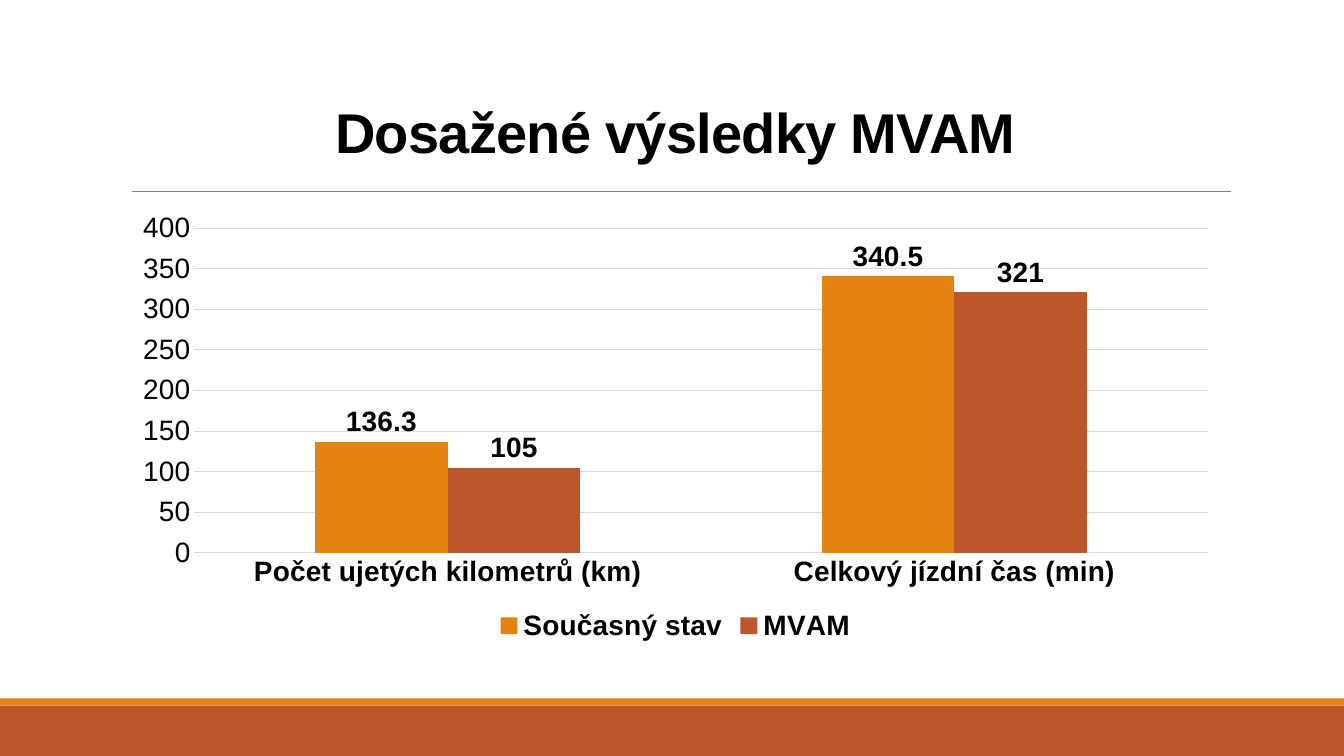
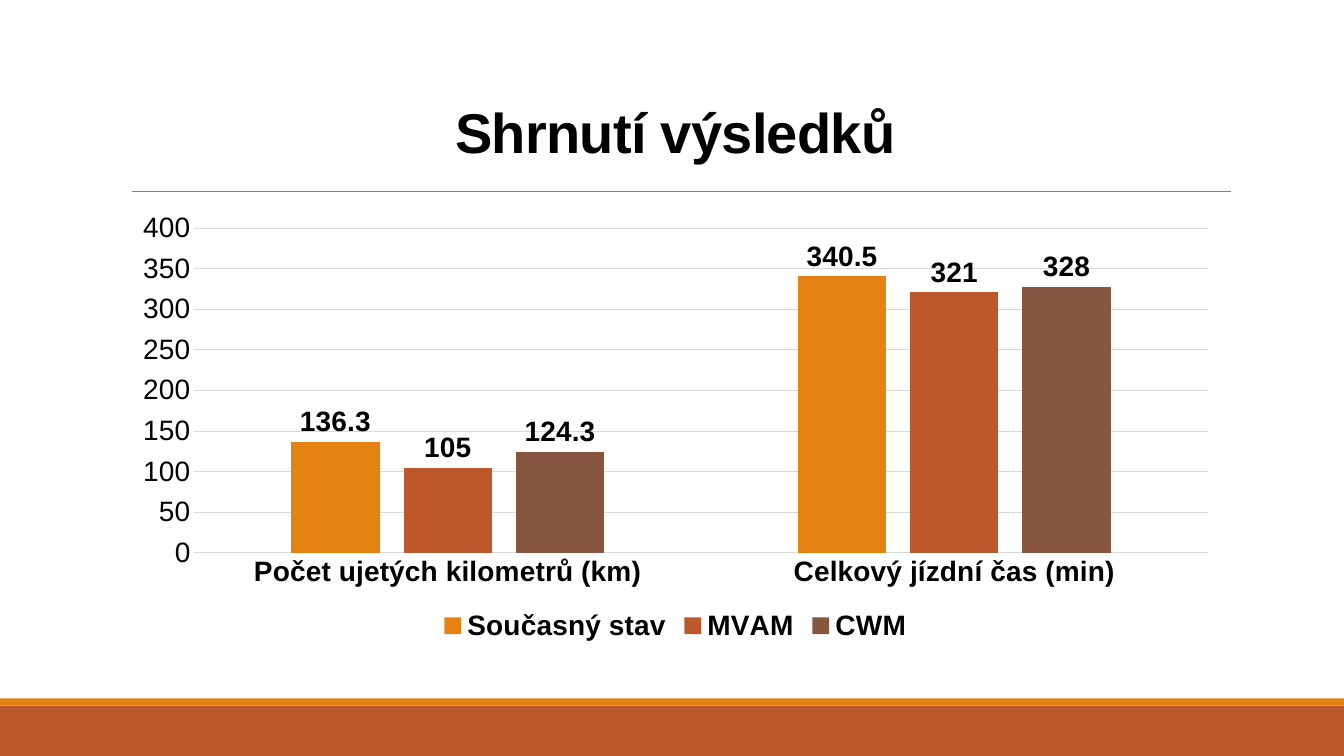
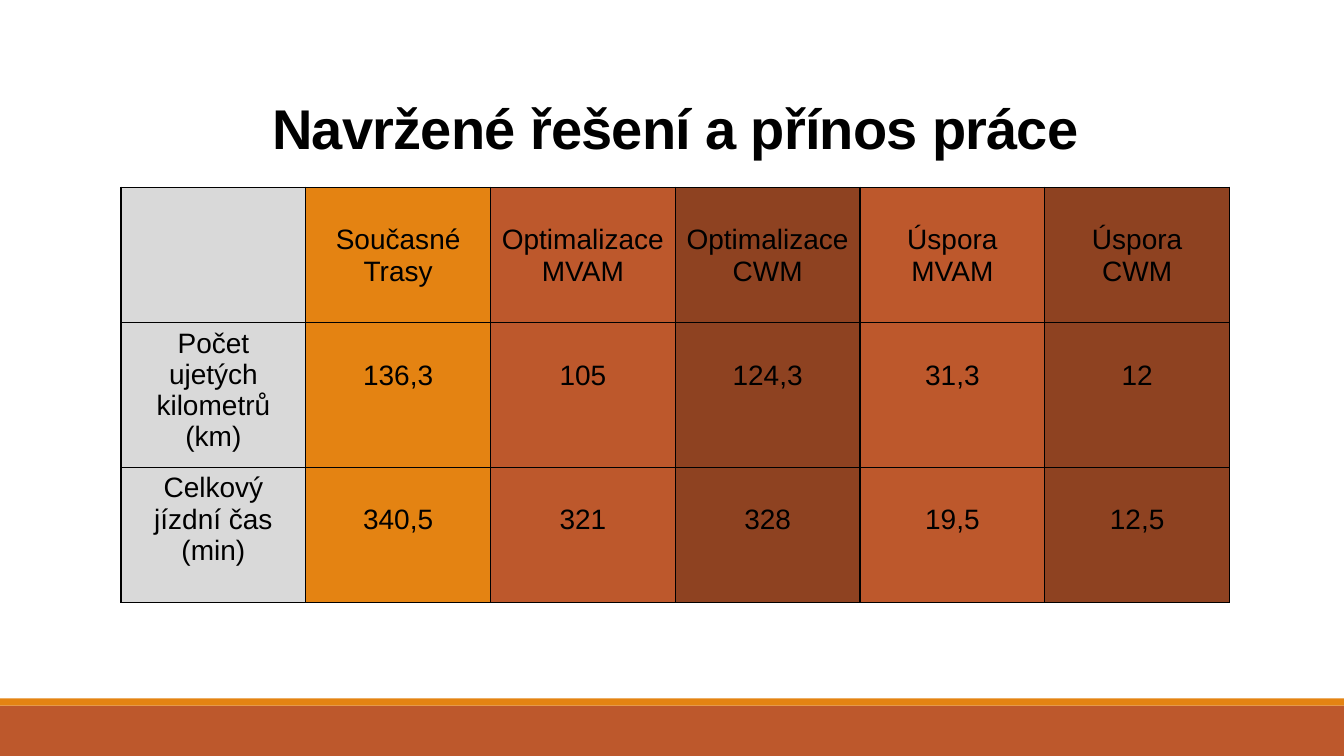
"""Builds three slides that compare route optimisation results."""
import lxml.etree
import pptx
import pptx.chart.data
import pptx.dml.color
import pptx.enum.chart
import pptx.enum.shapes
import pptx.enum.text
import pptx.oxml
import pptx.oxml.ns
import pptx.util

Cm = pptx.util.Cm
Pt = pptx.util.Pt

FONT = "Arial"
BLACK = "000000"
ORANGE = "E48312"
RUST = "BD582C"
BROWN = "865640"
DARK_RUST = "8E4221"
PALE_GREY = "D9D9D9"
RULE_GREY = "808080"

SLIDE_WIDTH, SLIDE_HEIGHT = 33.87, 19.05
CONTENT_LEFT, CONTENT_WIDTH = 3.05, 27.94
TITLE_HEIGHT = 3.1
BODY_SIZE = 20

CATEGORIES = ["Počet ujetých kilometrů (km)", "Celkový jízdní čas (min)"]
CURRENT = ("Současný stav", (136.3, 340.5), ORANGE)
MVAM = ("MVAM", (105, 321), RUST)
CWM = ("CWM", (124.3, 328), BROWN)

TABLE_ROWS = [
    ["", "Současné Trasy", "Optimalizace MVAM", "Optimalizace CWM", "Úspora MVAM", "Úspora CWM"],
    [CATEGORIES[0], "136,3", "105", "124,3", "31,3", "12"],
    [CATEGORIES[1], "340,5", "321", "328", "19,5", "12,5"],
]
COLUMN_FILLS = [PALE_GREY, ORANGE, RUST, DARK_RUST, RUST, DARK_RUST]


def color(value):
    return pptx.dml.color.RGBColor.from_string(value)


def style_font(font, size=BODY_SIZE, bold=False):
    font.name = FONT
    font.size = Pt(size)
    font.bold = bold
    font.color.rgb = color(BLACK)


def add_centered_run(para, text, size=BODY_SIZE, bold=False):
    para.alignment = pptx.enum.text.PP_ALIGN.CENTER
    span = para.add_run()
    span.text = text
    style_font(span.font, size, bold)
    return span


def add_band(page, top, height, fill):
    band = page.shapes.add_shape(
        pptx.enum.shapes.MSO_SHAPE.RECTANGLE, Cm(0), Cm(top), Cm(SLIDE_WIDTH), Cm(height))
    band.shadow.inherit = False
    band.fill.solid()
    band.fill.fore_color.rgb = color(fill)
    band.line.fill.background()


def add_title(page, text, bottom):
    box = page.shapes.add_textbox(
        Cm(CONTENT_LEFT), Cm(bottom - TITLE_HEIGHT), Cm(CONTENT_WIDTH), Cm(TITLE_HEIGHT))
    frame = box.text_frame
    frame.word_wrap = True
    frame.vertical_anchor = pptx.enum.text.MSO_ANCHOR.BOTTOM
    para = frame.paragraphs[0]
    para.line_spacing = 0.85
    span = add_centered_run(para, text, 40, True)
    span.font._element.set("spc", "-50")


def add_page(deck, title, title_bottom=4.29):
    page = deck.slides.add_slide(deck.slide_layouts[6])
    add_band(page, 17.78, 1.27, RUST)
    add_band(page, 17.6, 0.18, ORANGE)
    add_title(page, title, title_bottom)
    return page


def add_title_rule(page):
    rule = page.shapes.add_connector(
        pptx.enum.shapes.MSO_CONNECTOR.STRAIGHT, Cm(3.33), Cm(4.83), Cm(31.01), Cm(4.83))
    rule.line.color.rgb = color(RULE_GREY)
    rule.line.width = Pt(0.5)
    lxml.etree.SubElement(rule._element.spPr, pptx.oxml.ns.qn("a:effectLst"))


def style_axes(chart):
    no_ticks = pptx.enum.chart.XL_TICK_MARK.NONE
    for axis in (chart.category_axis, chart.value_axis):
        axis.major_tick_mark = no_ticks
        axis.minor_tick_mark = no_ticks
    style_font(chart.category_axis.tick_labels.font, bold=True)
    style_font(chart.value_axis.tick_labels.font)
    chart.value_axis.minimum_scale = 0
    chart.value_axis.maximum_scale = 400
    chart.value_axis.major_unit = 50
    chart.value_axis.has_major_gridlines = True
    chart.value_axis.format.line.fill.background()
    for line in (chart.category_axis.format.line, chart.value_axis.major_gridlines.format.line):
        line.color.rgb = color(PALE_GREY)
        line.width = Pt(0.75)


def style_series(series, fill):
    series.format.fill.solid()
    series.format.fill.fore_color.rgb = color(fill)
    series.invert_if_negative = False
    labels = series.data_labels
    labels.show_value = True
    labels.position = pptx.enum.chart.XL_LABEL_POSITION.OUTSIDE_END
    style_font(labels.font, bold=True)


def add_column_chart(page, entries, gap, overlap=0):
    data = pptx.chart.data.CategoryChartData()
    data.categories = CATEGORIES
    for name, values, fill in entries:
        data.add_series(name, values)
    chart = page.shapes.add_chart(
        pptx.enum.chart.XL_CHART_TYPE.COLUMN_CLUSTERED,
        Cm(CONTENT_LEFT), Cm(5.13), Cm(CONTENT_WIDTH), Cm(11.18), data).chart
    chart.font.name = "Calibri"
    chart.font.size = Pt(10)
    chart.font.color.rgb = color(BLACK)
    chart.has_title = False
    chart.has_legend = True
    chart.legend.position = pptx.enum.chart.XL_LEGEND_POSITION.BOTTOM
    chart.legend.include_in_layout = False
    style_font(chart.legend.font, bold=True)
    plot = chart.plots[0]
    plot.vary_by_categories = False
    plot.gap_width = gap
    plot.overlap = overlap
    style_axes(chart)
    for series, (name, values, fill) in zip(plot.series, entries):
        style_series(series, fill)


def add_cell_borders(cell):
    properties = cell._tc.get_or_add_tcPr()
    for position, side in enumerate(("lnL", "lnR", "lnT", "lnB")):
        border = pptx.oxml.parse_xml(
            f'<a:{side} {pptx.oxml.ns.nsdecls("a")} w="12700"><a:solidFill>'
            f'<a:srgbClr val="{BLACK}"/></a:solidFill></a:{side}>')
        properties.insert(position, border)


def add_results_table(page):
    row_height = 3.41
    table = page.shapes.add_table(
        len(TABLE_ROWS), len(COLUMN_FILLS), Cm(CONTENT_LEFT), Cm(4.72),
        Cm(CONTENT_WIDTH), Cm(row_height * len(TABLE_ROWS))).table
    table.first_row = False
    table.horz_banding = False
    for row, texts in zip(table.rows, TABLE_ROWS):
        row.height = Cm(row_height)
        for column, (cell, text, fill) in enumerate(zip(row.cells, texts, COLUMN_FILLS)):
            cell.fill.solid()
            cell.fill.fore_color.rgb = color(fill)
            cell.margin_top = Cm(0.94 if column else 0.13)
            add_cell_borders(cell)
            if text:
                add_centered_run(cell.text_frame.paragraphs[0], text)


def main():
    deck = pptx.Presentation()
    deck.slide_width = Cm(SLIDE_WIDTH)
    deck.slide_height = Cm(SLIDE_HEIGHT)

    page = add_page(deck, "Dosažené výsledky MVAM")
    add_title_rule(page)
    add_column_chart(page, [CURRENT, MVAM], gap=182)

    page = add_page(deck, "Shrnutí výsledků")
    add_title_rule(page)
    add_column_chart(page, [CURRENT, MVAM, CWM], gap=219, overlap=-27)

    page = add_page(deck, "Navržené řešení a přínos práce", title_bottom=4.19)
    add_results_table(page)

    deck.save("out.pptx")


if __name__ == "__main__":
    main()
